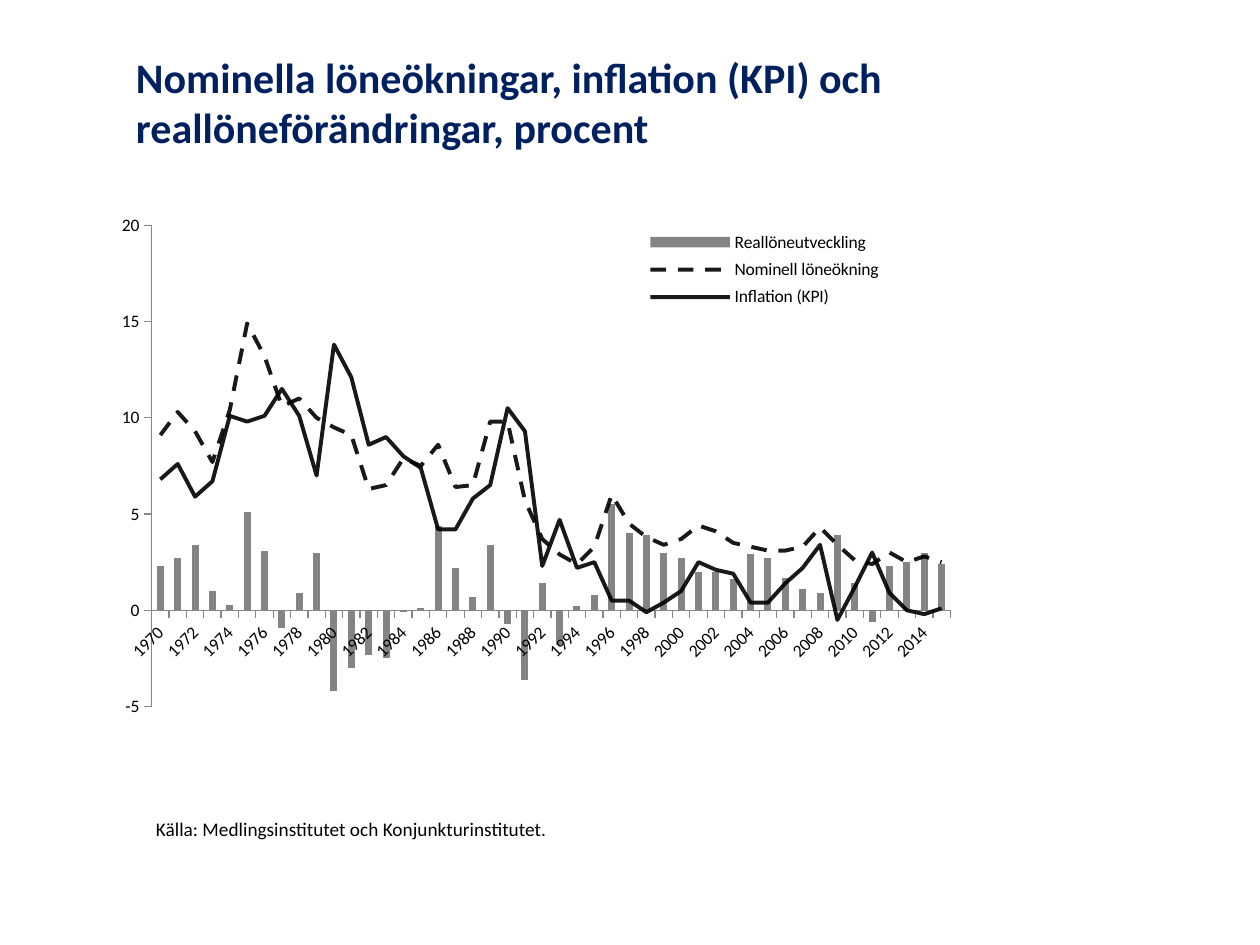
"""Build a slide with a combined column and line chart of Swedish wage growth."""
from dataclasses import dataclass

from lxml import etree
from pptx import Presentation
from pptx.chart.data import CategoryChartData
from pptx.dml.color import RGBColor
from pptx.enum.chart import XL_CHART_TYPE, XL_LEGEND_POSITION, XL_MARKER_STYLE, XL_TICK_MARK
from pptx.enum.dml import MSO_LINE
from pptx.enum.text import MSO_ANCHOR
from pptx.oxml.ns import qn
from pptx.util import Pt

COLUMN = XL_CHART_TYPE.COLUMN_STACKED
RIGHT = XL_LEGEND_POSITION.RIGHT
NO_MARKER = XL_MARKER_STYLE.NONE
OUTSIDE, NO_TICK = XL_TICK_MARK.OUTSIDE, XL_TICK_MARK.NONE
DASH, SOLID = MSO_LINE.DASH, MSO_LINE.SOLID
TOP, MIDDLE = MSO_ANCHOR.TOP, MSO_ANCHOR.MIDDLE

FONT = "Calibri"
COLORS = {"title": "002060", "text": "000000", "bar": "848484", "line": "000000", "axis": "868686"}
YEARS = [str(year) for year in range(1970, 2016)]
REAL = [
    2.3, 2.7, 3.4, 1, 0.3, 5.1, 3.1, -0.9, 0.9, 3, -4.2, -3, -2.3, -2.5, -0.1, 0.1,
    4.4, 2.2, 0.7, 3.4, -0.7, -3.6, 1.4, -1.8, 0.2, 0.8, 5.5, 4, 3.9, 3, 2.7, 2,
    2, 1.6, 2.9, 2.7, 1.7, 1.1, 0.9, 3.9, 1.4, -0.6, 2.3, 2.5, 3, 2.4,
]
NOMINAL = [
    9.1, 10.3, 9.3, 7.7, 10.4, 14.9, 13.2, 10.6, 11, 10, 9.5, 9.1, 6.3, 6.5, 7.9, 7.5,
    8.6, 6.4, 6.5, 9.8, 9.8, 5.7, 3.7, 2.9, 2.4, 3.3, 6, 4.5, 3.8, 3.4, 3.7, 4.4,
    4.1, 3.5, 3.3, 3.1, 3.1, 3.3, 4.3, 3.4, 2.6, 2.4, 3, 2.5, 2.8, 2.5,
]
INFLATION = [
    6.8, 7.6, 5.9, 6.7, 10.1, 9.8, 10.1, 11.5, 10.1, 7, 13.8, 12.1, 8.6, 9, 8, 7.4,
    4.2, 4.2, 5.8, 6.5, 10.5, 9.3, 2.3, 4.7, 2.2, 2.5, 0.5, 0.5, -0.1, 0.4, 1, 2.5,
    2.1, 1.9, 0.4, 0.4, 1.4, 2.2, 3.4, -0.5, 1.2, 3, 0.9, 0, -0.2, 0.1,
]


@dataclass
class Label:
    """A text box with its place in points and its type style."""
    text: str
    box: tuple[float, float, float, float]
    size: float
    color: str
    bold: bool
    anchor: MSO_ANCHOR


@dataclass
class Trend:
    """A line series and its dash."""
    name: str
    values: list[float]
    dash: MSO_LINE


LABELS = [
    Label("Nominella löneökningar, inflation (KPI) och reallöneförändringar, procent",
          (70.6, 25.9, 638, 87.1), 24, "title", True, TOP),
    Label("Källa: Medlingsinstitutet och Konjunkturinstitutet.",
          (82, 463, 638, 20.9), 11, "text", False, MIDDLE),
]
TRENDS = [
    Trend("Nominell löneökning", NOMINAL, DASH),
    Trend("Inflation (KPI)", INFLATION, SOLID),
]


def rgb(name: str) -> RGBColor:
    """Return a named colour."""
    return RGBColor.from_string(COLORS[name])


def add_label(s, label: Label) -> None:
    """Draw one text box."""
    tf = s.shapes.add_textbox(*map(Pt, label.box)).text_frame
    tf.word_wrap = True
    tf.vertical_anchor = label.anchor
    tf.text = label.text
    r = tf.paragraphs[0].runs[0]
    r.font.name, r.font.size, r.font.bold = FONT, Pt(label.size), label.bold
    r.font.color.rgb = rgb(label.color)


def add_element(parent, tag: str, val: str | None = None):
    """Append an XML element with an optional val."""
    child = etree.SubElement(parent, qn(tag))
    if val is not None:
        child.set("val", val)
    return child


def set_layout(parent, index: int, inner: bool, *fractions: float) -> None:
    """Place a chart part by fractions of the chart: left, top, width, height."""
    for old in parent.findall(qn("c:layout")):
        parent.remove(old)
    layout = etree.Element(qn("c:layout"))
    parent.insert(index, layout)
    manual = add_element(layout, "c:manualLayout")
    if inner:
        add_element(manual, "c:layoutTarget", "inner")
    for key in ("xMode", "yMode"):
        add_element(manual, f"c:{key}", "edge")
    for key, fraction in zip("xywh", fractions):
        add_element(manual, f"c:{key}", str(fraction))


def move_to_lines(chart) -> None:
    """Move every series after the first to a line plot on the same axes."""
    bars = chart.plots[0]._element
    lines = etree.Element(qn("c:lineChart"))
    bars.addnext(lines)
    add_element(lines, "c:grouping", "standard")
    add_element(lines, "c:varyColors", "0")
    for ser in bars.findall(qn("c:ser"))[1:]:
        for invert in ser.findall(qn("c:invertIfNegative")):
            ser.remove(invert)
        lines.append(ser)
    add_element(lines, "c:marker", "1")
    for axis in bars.findall(qn("c:axId")):
        add_element(lines, "c:axId", axis.get("val"))


def style_axes(chart) -> None:
    """Set scale, ticks and labels of both axes."""
    years, percent = chart.category_axis, chart.value_axis
    for axis in (years, percent):
        axis.has_major_gridlines = False
        axis.major_tick_mark, axis.minor_tick_mark = OUTSIDE, NO_TICK
        axis.format.line.color.rgb = rgb("axis")
        axis.format.line.width = Pt(0.75)
        axis.tick_labels.font.size = Pt(10)
    percent.minimum_scale, percent.maximum_scale, percent.major_unit = -5, 20, 5
    percent.tick_labels.number_format = "0"
    percent.tick_labels.number_format_is_linked = False
    body = years._element.find(qn("c:txPr")).find(qn("a:bodyPr"))
    body.set("rot", "-2700000")
    body.set("vert", "horz")
    no_multi = years._element.find(qn("c:noMultiLvlLbl"))
    for tag, step in (("c:tickLblSkip", "2"), ("c:tickMarkSkip", "1")):
        skip = etree.Element(qn(tag))
        skip.set("val", step)
        no_multi.addprevious(skip)


def add_wage_chart(s) -> None:
    """Draw real wage columns with the nominal wage and inflation lines."""
    data = CategoryChartData()
    data.categories = YEARS
    data.add_series("Reallöneutveckling", REAL)
    for trend in TRENDS:
        data.add_series(trend.name, trend.values)
    chart = s.shapes.add_chart(COLUMN, Pt(54), Pt(112.3), Pt(510.5), Pt(321.8), data).chart
    chart.has_title = False
    chart.font.name, chart.font.size = FONT, Pt(10)
    chart.font.color.rgb = rgb("text")
    move_to_lines(chart)
    bars, lines = chart.plots
    bars.gap_width, bars.overlap, bars.vary_by_categories = 150, 100, False
    real = bars.series[0]
    real.invert_if_negative = False
    real.format.fill.solid()
    real.format.fill.fore_color.rgb = rgb("bar")
    for ser, trend in zip(lines.series, TRENDS):
        ser.smooth = False
        ser.marker.style = NO_MARKER
        line = ser.format.line
        line.color.rgb = rgb("line")
        line.width, line.dash_style = Pt(2.25), trend.dash
        add_element(next(ser._element.iter(qn("a:srgbClr"))), "a:alpha", "90000")
    style_axes(chart)
    chart.has_legend = True
    legend = chart.legend
    legend.position, legend.include_in_layout = RIGHT, False
    legend.font.size = Pt(10)
    set_layout(bars._element.getparent(), 0, True, 0.064, 0.051, 0.894, 0.855)
    set_layout(legend._element, 1, False, 0.61, 0.05, 0.28, 0.16)


def main() -> None:
    """Build and save the slide."""
    prs = Presentation()
    prs.slide_width, prs.slide_height = Pt(720), Pt(540)
    s = prs.slides.add_slide(prs.slide_layouts[6])
    add_wage_chart(s)
    for label in LABELS:
        add_label(s, label)
    prs.save("out.pptx")


if __name__ == "__main__":
    main()
